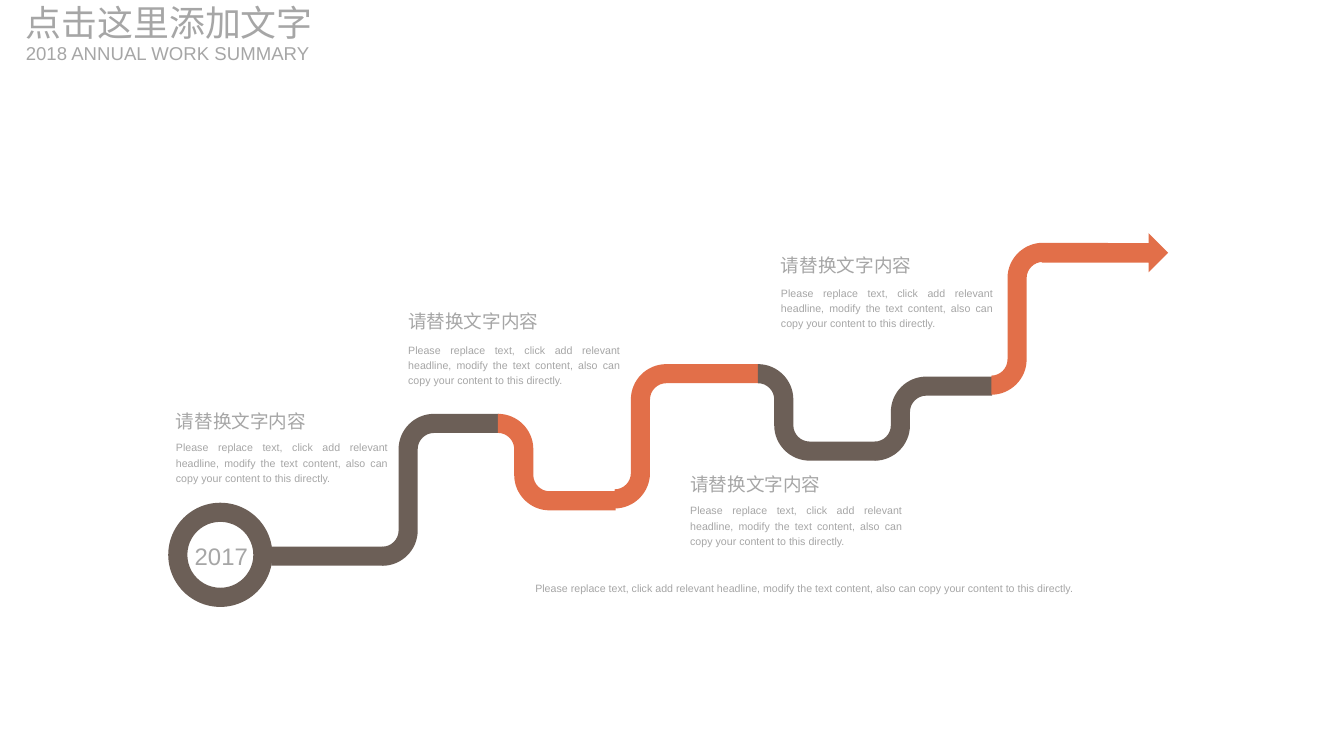
from pptx import Presentation
from pptx import util as u
from pptx.dml import color
from pptx.enum import shapes, text
from pptx.oxml import ns
from lxml import etree

PX = 9144
HALF_WIDTH = 10
RADIUS = 27
ARC_HANDLE = 0.55
BROWN = "6C5F57"
ORANGE = "E26F49"
GRAY = "A6A6A6"
LATIN = "Arial"
CHINESE = "Noto Sans CJK SC"
HEADLINE = "请替换文字内容"
DESCRIPTION = (
    "Please replace text, click add relevant headline, modify the text content, "
    "also can copy your content to this directly."
)


def px(value):
    return u.Emu(round(value * PX))


def rgb(hex_color):
    return color.RGBColor.from_string(hex_color)


def paint(shape, hex_color):
    shape.shadow.inherit = False
    shape.fill.solid()
    shape.fill.fore_color.rgb = rgb(hex_color)
    shape.line.fill.background()


def add_preset(slide, kind, box, hex_color):
    shape = slide.shapes.add_shape(kind, *map(px, box))
    paint(shape, hex_color)
    return shape


def add_text(slide, content, box, size, font=LATIN, align=text.PP_ALIGN.LEFT,
             anchor=text.MSO_ANCHOR.TOP, spacing=1.2):
    shape = slide.shapes.add_textbox(*map(px, box))
    frame = shape.text_frame
    frame.margin_left = frame.margin_right = 0
    frame.margin_top = frame.margin_bottom = 0
    frame.word_wrap = True
    frame.auto_size = text.MSO_AUTO_SIZE.SHAPE_TO_FIT_TEXT
    frame.vertical_anchor = anchor
    frame.text = content
    paragraph = frame.paragraphs[0]
    paragraph.alignment = align
    paragraph.line_spacing = spacing
    run = paragraph.runs[0]
    run.font.name = font
    run.font.size = u.Pt(size)
    run.font.color.rgb = rgb(GRAY)
    east_asian = etree.Element(ns.qn("a:ea"), typeface=CHINESE)
    run.font._rPr.find(ns.qn("a:latin")).addnext(east_asian)


def bend_edge(start, end, offset):
    (start_x, start_y), (end_x, end_y) = start, end
    turn = 1 if end_y > start_y else -1
    side_x = start_x + RADIUS + offset
    return [
        (start_x, start_y - turn * offset),
        (side_x, start_y + turn * RADIUS),
        (side_x, end_y - turn * RADIUS),
        (start_x + 2 * RADIUS, end_y - turn * offset),
        (end_x, end_y - turn * offset),
    ]


def toward(point, corner):
    return tuple(round(a + ARC_HANDLE * (b - a)) for a, b in zip(point, corner))


def round_corners(shape):
    nodes = list(shape._element.iter(ns.qn("a:pt")))
    points = [(int(node.get("x")), int(node.get("y"))) for node in nodes]
    for index, horizontal_first in ((1, True), (3, False), (7, True), (9, False)):
        before, after = points[index - 1], points[index]
        corner = (after[0], before[1]) if horizontal_first else (before[0], after[1])
        segment = nodes[index].getparent()
        curve = etree.Element(ns.qn("a:cubicBezTo"))
        for x, y in (toward(before, corner), toward(after, corner), after):
            etree.SubElement(curve, ns.qn("a:pt"), x=str(x), y=str(y))
        segment.getparent().replace(segment, curve)


def add_bend(slide, start, end, hex_color):
    outline = bend_edge(start, end, HALF_WIDTH) + bend_edge(start, end, -HALF_WIDTH)[::-1]
    points = [(px(x), px(y)) for x, y in outline]
    builder = slide.shapes.build_freeform(*points[0], scale=1.0)
    builder.add_line_segments(points[1:], close=True)
    shape = builder.convert_to_shape()
    round_corners(shape)
    paint(shape, hex_color)


def add_start(slide):
    ring = add_preset(slide, shapes.MSO_SHAPE.DONUT, (176, 526, 109, 109), BROWN)
    ring.adjustments[0] = 2 * HALF_WIDTH / 109
    add_text(slide, "2017", (186, 561, 91, 36), 18, align=text.PP_ALIGN.CENTER)
    add_preset(slide, shapes.MSO_SHAPE.RECTANGLE, (284, 572, 117, 20), BROWN)


def add_road(slide):
    bends = [
        ((643, 522), (794, 391), ORANGE),
        ((915, 472), (1038, 404), BROWN),
        ((793, 391), (916, 472), BROWN),
        ((400, 582), (522, 443), BROWN),
        ((521, 443), (644, 524), ORANGE),
        ((1037, 403), (1159, 264), ORANGE),
    ]
    for start, end, hex_color in bends:
        add_bend(slide, start, end, hex_color)
    add_preset(slide, shapes.MSO_SHAPE.RIGHT_ARROW, (1090, 244, 132, 41), ORANGE)


def add_milestone(slide, left, headline_top, headline_width, description_top):
    add_text(slide, HEADLINE, (left, headline_top, headline_width, 28), 14)
    add_text(slide, DESCRIPTION, (left, description_top, 222, 48), 8,
             align=text.PP_ALIGN.JUSTIFY, anchor=text.MSO_ANCHOR.MIDDLE)


def add_title(slide):
    middle = text.MSO_ANCHOR.MIDDLE
    add_text(slide, "点击这里添加文字", (27, 0, 432, 47), 27, font=CHINESE,
             anchor=middle, spacing=1.0)
    add_text(slide, "2018 ANNUAL WORK SUMMARY", (27, 44, 307, 24), 14,
             anchor=middle, spacing=1.0)


def main():
    presentation = Presentation()
    presentation.slide_width = px(1406)
    presentation.slide_height = px(791)
    slide = presentation.slides.add_slide(presentation.slide_layouts[6])
    add_start(slide)
    add_road(slide)
    add_text(slide, DESCRIPTION, (560, 606, 676, 15), 8, align=text.PP_ALIGN.JUSTIFY)
    milestones = [
        (427, 320, 183, 357),
        (722, 490, 191, 525),
        (817, 261, 197, 297),
        (184, 424, 175, 459),
    ]
    for milestone in milestones:
        add_milestone(slide, *milestone)
    add_title(slide)
    presentation.save("out.pptx")


if __name__ == "__main__":
    main()
